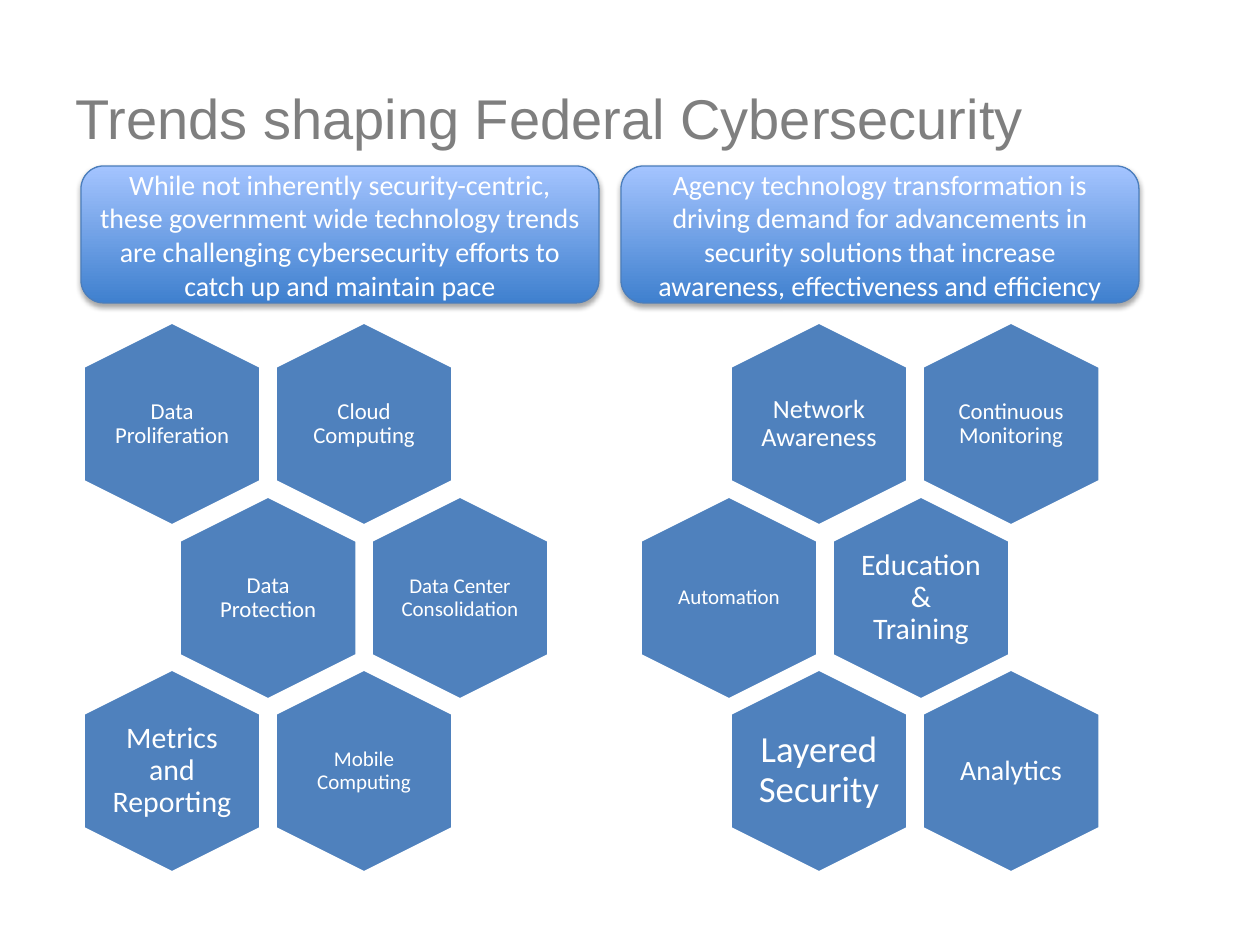
from lxml import etree
from pptx import Presentation
from pptx.dml.color import RGBColor
from pptx.enum.shapes import MSO_SHAPE
from pptx.enum.text import MSO_ANCHOR, PP_ALIGN
from pptx.oxml.ns import qn
from pptx.util import Emu, Pt

ROUNDED, HEXAGON = MSO_SHAPE.ROUNDED_RECTANGLE, MSO_SHAPE.HEXAGON
MIDDLE, LEFT, CENTER = MSO_ANCHOR.MIDDLE, PP_ALIGN.LEFT, PP_ALIGN.CENTER

WHITE = RGBColor(0xFF, 0xFF, 0xFF)
GRAY = RGBColor(0x7F, 0x7F, 0x7F)
BLUE = RGBColor(0x4F, 0x81, 0xBD)
BANNER_LINE = RGBColor(0x4B, 0x7E, 0xBC)
BANNER_BOTTOM = RGBColor(0x3F, 0x80, 0xCE)
BANNER_TOP = RGBColor(0xA4, 0xC4, 0xFF)

TITLE = "Trends shaping Federal Cybersecurity"
BANNERS = [
    "While not inherently security-centric, these government wide technology "
    "trends are challenging cybersecurity efforts to catch up and maintain pace",
    "Agency technology transformation is driving demand for advancements in "
    "security solutions that increase awareness, effectiveness and efficiency",
]
# Each row: centre of its first hexagon, then the (label, size) pairs.
HONEYCOMBS = [
    [
        (172, [("Data Proliferation", 13), ("Cloud Computing", 13)]),
        (268, [("Data Protection", 13), ("Data Center Consolidation", 12)]),
        (172, [("Metrics and Reporting", 17), ("Mobile Computing", 12)]),
    ],
    [
        (819, [("Network Awareness", 15), ("Continuous Monitoring", 13)]),
        (729, [("Automation", 12), ("Education & Training", 17)]),
        (819, [("Layered Security", 21), ("Analytics", 16)]),
    ],
]

PX = 914400 / 126
BANNER_LEFT, BANNER_Y, BANNER_PITCH = 81, 166, 540
BANNER_SIZE = (518, 137)
ROW_CENTERS = (424, 598, 771)
COLUMN_PITCH = 192
HEXAGON_SIZE = (204, 178)  # before the quarter turn
LABEL_SIZE = (122, 140)


def px(*lengths):
    return [Emu(round(length * PX)) for length in lengths]


def centered(x, y, size):
    width, height = size
    return px(x - width / 2, y - height / 2, width, height)


def write(shape, text, size, font="Calibri", color=WHITE, align=CENTER, **frame_format):
    frame = shape.text_frame
    frame_format = {"word_wrap": True, "vertical_anchor": MIDDLE, **frame_format}
    for name, value in frame_format.items():
        setattr(frame, name, value)
    frame.text = text
    paragraph = frame.paragraphs[0]
    paragraph.alignment = align
    for name, value in {"name": font, "size": Pt(size)}.items():
        setattr(paragraph.font, name, value)
    paragraph.font.color.rgb = color
    return paragraph


def add_soft_shadow(shape):
    shape.shadow.inherit = False
    effects = shape._element.spPr.find(qn("a:effectLst"))
    shadow = etree.SubElement(effects, qn("a:outerShdw"), blurRad="40000",
                              dist="23000", dir="5400000", rotWithShape="0")
    color = etree.SubElement(shadow, qn("a:srgbClr"), val="000000")
    etree.SubElement(color, qn("a:alpha"), val="35000")


def add_banner(slide, index, text):
    left = BANNER_LEFT + index * BANNER_PITCH
    banner = slide.shapes.add_shape(ROUNDED, *px(left, BANNER_Y, *BANNER_SIZE))
    banner.fill.gradient()
    banner.fill.gradient_angle = 90
    for stop, color in zip(banner.fill.gradient_stops, (BANNER_BOTTOM, BANNER_TOP)):
        stop.color.rgb = color
    banner.line.color.rgb = BANNER_LINE
    banner.line.width = Pt(0.75)
    add_soft_shadow(banner)
    write(banner, text, 16)


def add_hexagon(group, x, y, text, size):
    hexagon = group.shapes.add_shape(HEXAGON, *centered(x, y, HEXAGON_SIZE))
    hexagon.rotation = 90
    hexagon.shadow.inherit = False
    hexagon.fill.solid()
    hexagon.fill.fore_color.rgb = BLUE
    hexagon.line.color.rgb = WHITE
    hexagon.line.width = Pt(2)
    # The label is its own box so that it stays upright.
    label = group.shapes.add_textbox(*centered(x, y, LABEL_SIZE))
    paragraph = write(label, text, size, margin_left=0, margin_right=0,
                      margin_top=0, margin_bottom=0)
    paragraph.line_spacing = 0.9


def main():
    presentation = Presentation()
    presentation.slide_width, presentation.slide_height = px(1260, 945)
    slide = presentation.slides.add_slide(presentation.slide_layouts[5])

    title = slide.shapes.title
    title.left, title.top, title.width, title.height = px(63, 38, 1134, 158)
    write(title, TITLE, 32, font="Arial", color=GRAY, align=LEFT)

    for index, text in enumerate(BANNERS):
        add_banner(slide, index, text)
    for rows in HONEYCOMBS:
        group = slide.shapes.add_group_shape()
        for y, (first_x, cells) in zip(ROW_CENTERS, rows):
            for column, (text, size) in enumerate(cells):
                add_hexagon(group, first_x + column * COLUMN_PITCH, y, text, size)

    presentation.save("out.pptx")


if __name__ == "__main__":
    main()
